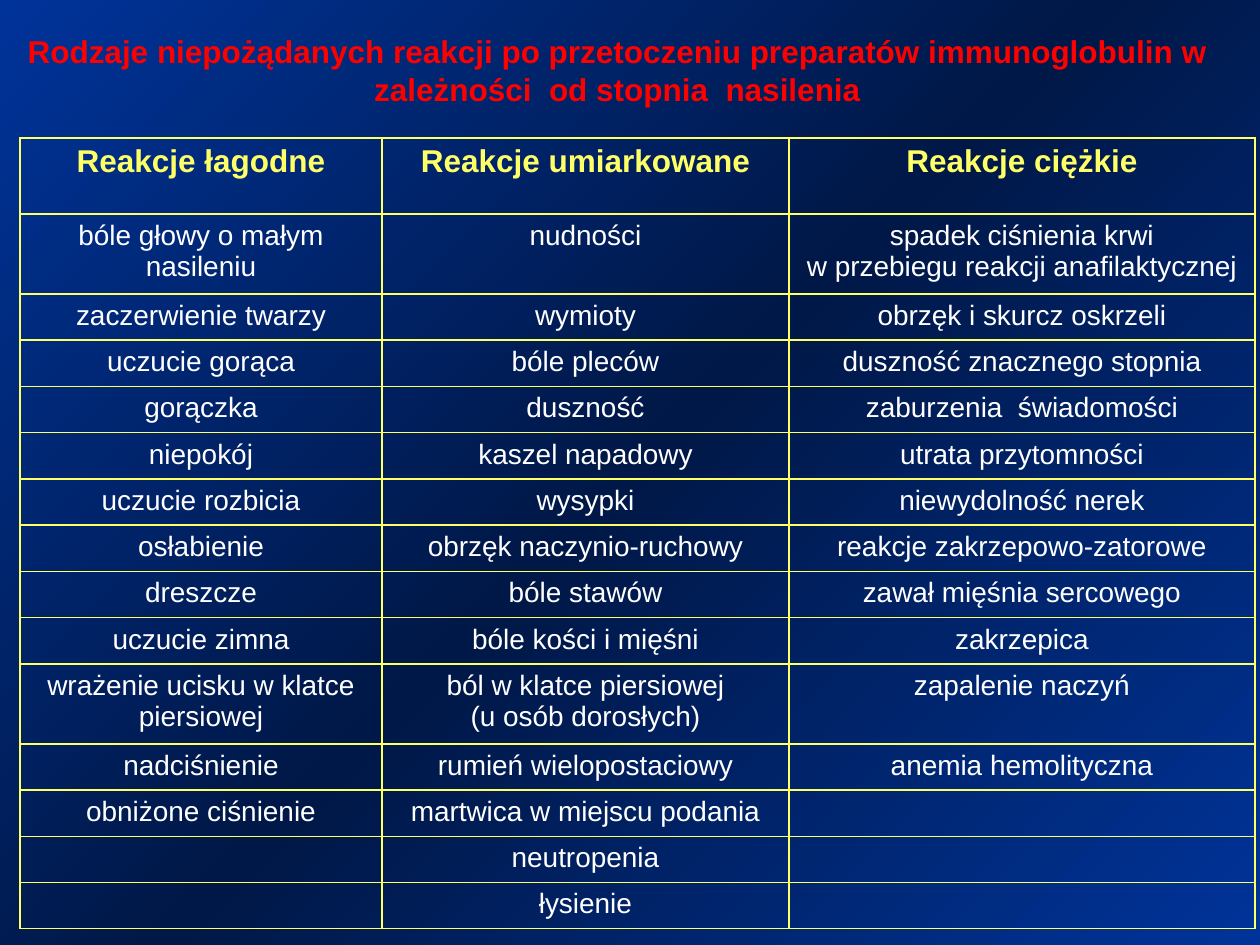
from copy import deepcopy

from lxml import etree
from pptx import Presentation
from pptx import util as u
from pptx.dml.color import RGBColor
from pptx.enum import text
from pptx.oxml.ns import qn

PX = 914400 / 126
FONT = "Arial"
BLUE = RGBColor(0x00, 0x33, 0x99)
NAVY = RGBColor(0x00, 0x18, 0x47)
RED = RGBColor(0xFF, 0x00, 0x00)
YELLOW = RGBColor(0xFF, 0xFF, 0x66)
WHITE = RGBColor(0xFF, 0xFF, 0xFF)

TITLE = ("Rodzaje niepożądanych reakcji po przetoczeniu preparatów "
         "immunoglobulin w zależności  od stopnia  nasilenia")
REACTIONS = [
    ("Reakcje łagodne", "Reakcje umiarkowane", "Reakcje ciężkie"),
    ("bóle głowy o małym nasileniu", "nudności",
     "spadek ciśnienia krwi\nw przebiegu reakcji anafilaktycznej"),
    ("zaczerwienie twarzy", "wymioty", "obrzęk i skurcz oskrzeli"),
    ("uczucie gorąca", "bóle pleców", "duszność znacznego stopnia"),
    ("gorączka", "duszność", "zaburzenia  świadomości"),
    ("niepokój", "kaszel napadowy", "utrata przytomności"),
    ("uczucie rozbicia", "wysypki", "niewydolność nerek"),
    ("osłabienie", "obrzęk naczynio-ruchowy", "reakcje zakrzepowo-zatorowe"),
    ("dreszcze", "bóle stawów", "zawał mięśnia sercowego"),
    ("uczucie zimna", "bóle kości i mięśni", "zakrzepica"),
    ("wrażenie ucisku w klatce piersiowej",
     "ból w klatce piersiowej\n(u osób dorosłych)", "zapalenie naczyń"),
    ("nadciśnienie", "rumień wielopostaciowy", "anemia hemolityczna"),
    ("obniżone ciśnienie", "martwica w miejscu podania", ""),
    ("", "neutropenia", ""),
    ("", "łysienie", ""),
]
COLUMN_WIDTHS = (362, 407, 466)
TABLE_HEIGHT = 791
HEADER_HEIGHT = 76
TALL_HEIGHT = 80
TALL_ROWS = (1, 10)


def px(value):
    return u.Emu(round(value * PX))


def paint_background(slide):
    fill = slide.background.fill
    fill.gradient()
    fill.gradient_angle = 315
    stop_list = slide.background._cSld.find(".//" + qn("a:gsLst"))
    stop_list.append(deepcopy(stop_list[0]))
    for stop, position, color in zip(fill.gradient_stops, (0, 0.5, 1), (BLUE, NAVY, BLUE)):
        stop.position = position
        stop.color.rgb = color


def set_text(text_frame, content, size, color, bold):
    text_frame.text = content
    for paragraph in text_frame.paragraphs:
        paragraph.alignment = text.PP_ALIGN.CENTER
        for run in paragraph.runs:
            run.font.name = FONT
            run.font.size = u.Pt(size)
            run.font.bold = bold
            run.font.color.rgb = color
        if not paragraph.runs:
            # An empty cell keeps its row height through the end mark's size.
            etree.SubElement(paragraph._p, qn("a:endParaRPr"), sz=str(size * 100))


def add_title(slide):
    box = slide.shapes.add_textbox(px(0), px(25), px(1235), px(126))
    frame = box.text_frame
    frame.word_wrap = True
    frame.vertical_anchor = text.MSO_ANCHOR.MIDDLE
    frame.margin_bottom = px(42)
    set_text(frame, TITLE, 18, RED, True)


def set_borders(cell):
    properties = cell._tc.get_or_add_tcPr()
    for index, side in enumerate(("lnL", "lnR", "lnT", "lnB")):
        line = etree.Element(qn("a:" + side), w=str(u.Pt(1)))
        fill = etree.SubElement(line, qn("a:solidFill"))
        etree.SubElement(fill, qn("a:srgbClr"), val=str(YELLOW))
        properties.insert(index, line)


def row_height(index):
    if index == 0:
        return HEADER_HEIGHT
    if index in TALL_ROWS:
        return TALL_HEIGHT
    remaining = TABLE_HEIGHT - HEADER_HEIGHT - TALL_HEIGHT * len(TALL_ROWS)
    return remaining / (len(REACTIONS) - 1 - len(TALL_ROWS))


def add_reaction_table(slide):
    frame = slide.shapes.add_table(len(REACTIONS), len(COLUMN_WIDTHS), px(20), px(138),
                                   px(sum(COLUMN_WIDTHS)), px(TABLE_HEIGHT))
    table = frame.table
    table.first_row = False
    table.horz_banding = False
    for column, width in zip(table.columns, COLUMN_WIDTHS):
        column.width = px(width)
    for index, (row, contents) in enumerate(zip(table.rows, REACTIONS)):
        row.height = px(row_height(index))
        size, color, bold = (16, WHITE, False) if index else (18, YELLOW, True)
        for cell, content in zip(row.cells, contents):
            cell.fill.background()
            set_borders(cell)
            set_text(cell.text_frame, content, size, color, bold)


def main():
    presentation = Presentation()
    presentation.slide_width = px(1260)
    presentation.slide_height = px(945)
    slide = presentation.slides.add_slide(presentation.slide_layouts[6])
    paint_background(slide)
    add_title(slide)
    add_reaction_table(slide)
    presentation.save("out.pptx")


if __name__ == "__main__":
    main()
